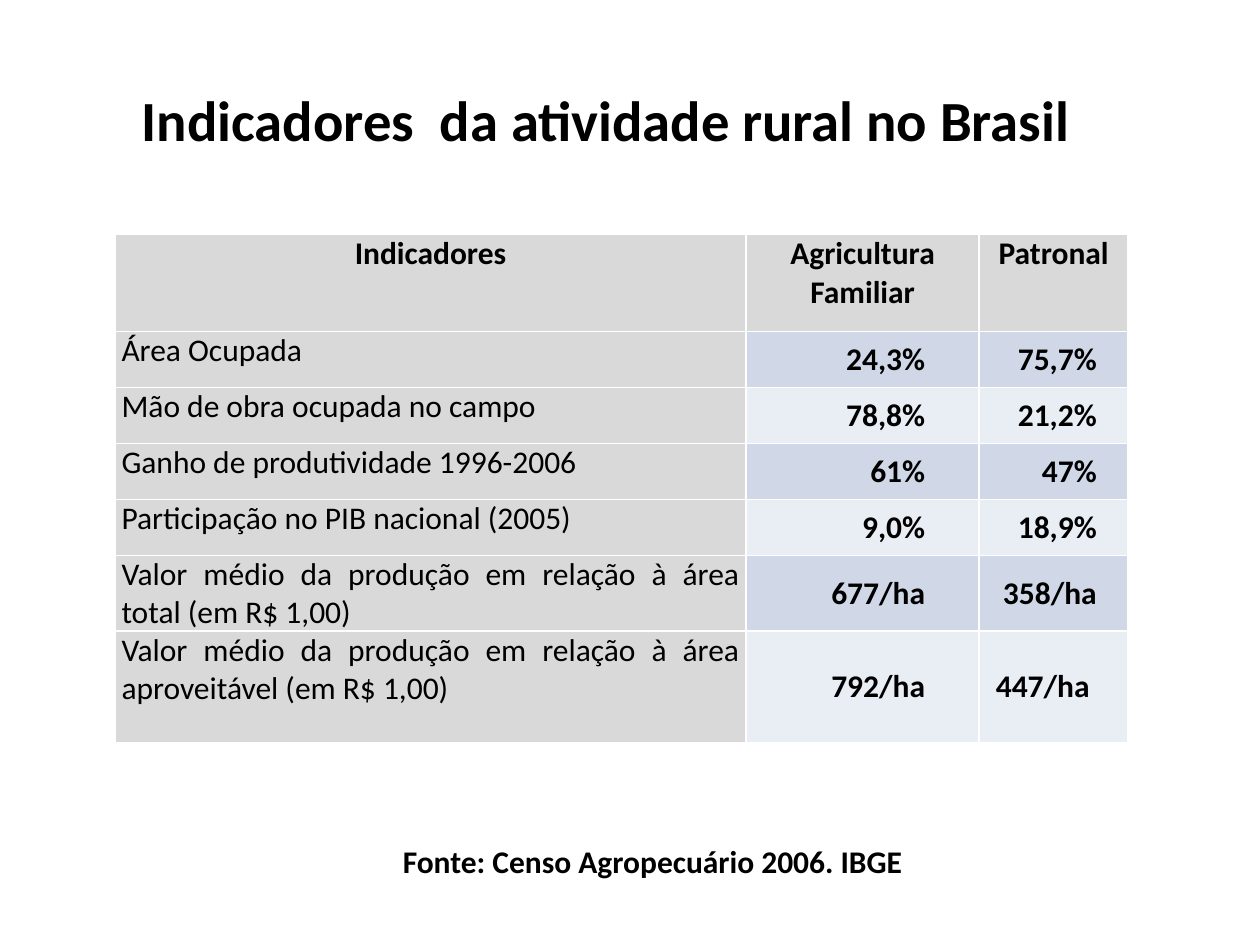
from dataclasses import dataclass

from pptx import Presentation
from pptx.dml.color import RGBColor
from pptx.enum.text import MSO_ANCHOR, PP_ALIGN
from pptx.util import Cm, Pt

CENTER, JUSTIFY, RIGHT = PP_ALIGN.CENTER, PP_ALIGN.JUSTIFY, PP_ALIGN.RIGHT
TOP, MIDDLE = MSO_ANCHOR.TOP, MSO_ANCHOR.MIDDLE
BLANK_LAYOUT = 6


@dataclass(frozen=True)
class Theme:
    font: str = "Calibri"
    ink: RGBColor = RGBColor(0x00, 0x00, 0x00)
    label_fill: RGBColor = RGBColor(0xD9, 0xD9, 0xD9)
    bands: tuple = (RGBColor(0xD0, 0xD8, 0xE8), RGBColor(0xE9, 0xED, 0xF4))
    title_size: float = 32.4
    body_size: float = 18


class SlideBuilder:
    def __init__(self, slide, theme):
        self.slide = slide
        self.theme = theme

    def set_text(self, frame, text, size, align, bold=True):
        para = frame.paragraphs[0]
        para.text = text
        para.alignment = align
        para.font.name = self.theme.font
        para.font.size = Pt(size)
        para.font.bold = bold
        para.font.color.rgb = self.theme.ink

    def text(self, text, left, top, width, height, size, align, wrap=True):
        box = self.slide.shapes.add_textbox(Cm(left), Cm(top), Cm(width), Cm(height))
        frame = box.text_frame
        frame.word_wrap = wrap
        frame.vertical_anchor = MIDDLE
        self.set_text(frame, text, size, align)

    def cell(self, cell, text, fill, align, anchor=TOP, bold=True, right_margin=0.13):
        cell.fill.solid()
        cell.fill.fore_color.rgb = fill
        cell.vertical_anchor = anchor
        cell.margin_left, cell.margin_right = Cm(0.13), Cm(right_margin)
        cell.margin_top = cell.margin_bottom = Cm(0)
        self.set_text(cell.text_frame, text, self.theme.body_size, align, bold)

    def table(self, rows, left, top, widths, heights, value_margins):
        table = self.slide.shapes.add_table(
            len(rows), len(widths), Cm(left), Cm(top), Cm(sum(widths)), Cm(sum(heights))
        ).table
        table.horz_banding = False
        for column, width in zip(table.columns, widths):
            column.width = Cm(width)
        for row, height in zip(table.rows, heights):
            row.height = Cm(height)

        # Header row
        header, *body = rows
        for column, text in enumerate(header):
            self.cell(table.cell(0, column), text, self.theme.label_fill, CENTER)

        # Labels, then values on alternating bands
        for index, (label, *values) in enumerate(body):
            row = index + 1
            band = self.theme.bands[index % 2]
            self.cell(table.cell(row, 0), label, self.theme.label_fill, JUSTIFY, bold=False)
            for column, (value, margin) in enumerate(zip(values, value_margins), 1):
                self.cell(table.cell(row, column), value, band, RIGHT, MIDDLE, right_margin=margin)


INDICATORS = [
    ("Indicadores", "Agricultura Familiar", "Patronal"),
    ("Área Ocupada", "24,3%", "75,7%"),
    ("Mão de obra ocupada no campo", "78,8%", "21,2%"),
    ("Ganho de produtividade 1996-2006", "61%", "47%"),
    ("Participação no PIB nacional (2005)", "9,0%", "18,9%"),
    ("Valor médio da produção em relação à área total (em R$ 1,00)", "677/ha", "358/ha"),
    ("Valor médio da produção em relação à área aproveitável (em R$ 1,00)", "792/ha", "447/ha "),
]


def main():
    deck = Presentation()
    deck.slide_width, deck.slide_height = Cm(25.4), Cm(19.05)
    theme = Theme()
    page = SlideBuilder(deck.slides.add_slide(deck.slide_layouts[BLANK_LAYOUT]), theme)

    # Title
    page.text("Indicadores  da atividade rural no Brasil", 0, 0.8, 24.43, 3.18,
              theme.title_size, CENTER)

    # Indicator table
    page.table(INDICATORS, left=2.32, top=4.73, widths=[12.72, 4.7, 3],
               heights=[1.95] + [1.13] * 4 + [1.45, 2.26], value_margins=[1.09, 0.63])

    # Source line
    page.text("Fonte: Censo Agropecuário 2006. IBGE", 7.87, 16.84, 10.67, 1.02,
              theme.body_size, JUSTIFY, wrap=False)

    deck.save("out.pptx")


if __name__ == "__main__":
    main()
